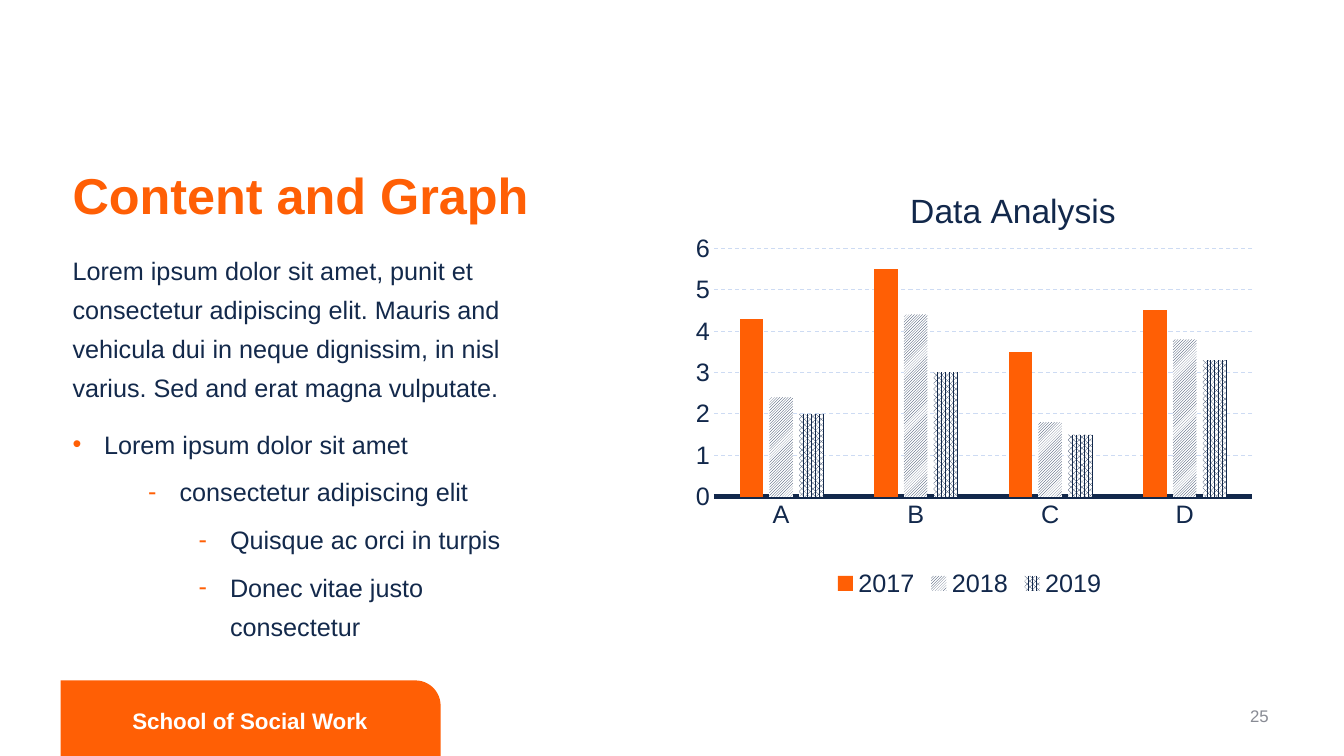
from dataclasses import dataclass

from lxml import etree
from pptx import Presentation
from pptx.chart.data import CategoryChartData
from pptx.dml.color import RGBColor
from pptx.enum.chart import XL_CHART_TYPE, XL_LEGEND_POSITION, XL_TICK_MARK
from pptx.enum.dml import MSO_LINE, MSO_PATTERN
from pptx.enum.shapes import MSO_SHAPE
from pptx.enum.text import MSO_ANCHOR, MSO_AUTO_SIZE, PP_ALIGN
from pptx.oxml.ns import qn
from pptx.util import Pt

CLUSTERED = XL_CHART_TYPE.COLUMN_CLUSTERED
LEGEND_BOTTOM = XL_LEGEND_POSITION.BOTTOM
NO_TICKS = XL_TICK_MARK.NONE
DASH = MSO_LINE.DASH
UPWARD_DIAGONAL = MSO_PATTERN.DARK_UPWARD_DIAGONAL
DENSE_DOTS = MSO_PATTERN.PERCENT_75
TITLE_ONLY_AND_BODY = 1
LEFT, CENTER = PP_ALIGN.LEFT, PP_ALIGN.CENTER
TOP, MIDDLE, BOTTOM = MSO_ANCHOR.TOP, MSO_ANCHOR.MIDDLE, MSO_ANCHOR.BOTTOM


@dataclass(frozen=True)
class Theme:
    font: str = "Arial"
    orange: str = "FF5F05"
    navy: str = "13294B"
    chart_navy: str = "12284B"
    grid: str = "CDDBF3"
    gray: str = "888B94"
    white: str = "FFFFFF"
    title_size: int = 36
    body_size: int = 18
    chart_title_size: int = 24
    footer_size: int = 16
    number_size: int = 12


THEME = Theme()

SLIDE_SIZE = (960, 540)
TITLE = "Content and Graph"
# Text, level, bullet, left margin, space before
BODY = [
    ("Lorem ipsum dolor sit amet, punit et consectetur adipiscing elit. "
     "Mauris and vehicula dui in neque dignissim, in nisl varius. "
     "Sed and erat magna vulputate.", 0, None, 0, 0),
    ("Lorem ipsum dolor sit amet", 0, "•", 22.5, 12),
    ("consectetur adipiscing elit", 1, "-", 76.5, 6),
    ("Quisque ac orci in turpis", 2, "-", 112.5, 6),
    ("Donec vitae justo consectetur", 2, "-", 112.5, 6),
]
HANGING = 22.5
FOOTER = "School of Social Work"
SLIDE_NUMBER = "25"

CHART_TITLE = "Data Analysis"
CATEGORIES = ["A", "B", "C", "D"]
# Name, values, pattern
SERIES = [
    ("2017", (4.3, 5.5, 3.5, 4.5), None),
    ("2018", (2.4, 4.4, 1.8, 3.8), UPWARD_DIAGONAL),
    ("2019", (2, 3, 1.5, 3.3), DENSE_DOTS),
]

# Left, top, width, height
TITLE_BOX = (44.6, 118, 353.5, 46.8)
BODY_BOX = (44.6, 172, 334.8, 312.5)
CHART_BOX = (480.2, 118, 424.8, 312.5)
TAB_BOX = (43.4, 486, 271.4, 54)
FOOTER_BOX = (56.9, 500.4, 243.4, 28.8)
NUMBER_BOX = (884.9, 500.4, 29.5, 21.6)


def color(value):
    return RGBColor.from_string(value)


def points(box):
    return [Pt(value) for value in box]


def place(shape, box):
    shape.left, shape.top, shape.width, shape.height = points(box)


def style_font(font, size, value, bold=False):
    font.name, font.size, font.bold = THEME.font, Pt(size), bold
    font.color.rgb = color(value)


def set_frame(shape, anchor, auto_size=MSO_AUTO_SIZE.NONE):
    frame = shape.text_frame
    frame.word_wrap = True
    frame.auto_size = auto_size
    frame.vertical_anchor = anchor
    return frame


def add_run(paragraph, text, size, value, bold=False):
    run = paragraph.add_run()
    run.text = text
    style_font(run.font, size, value, bold)


def set_bullet(paragraph, bullet, margin):
    properties = paragraph._p.get_or_add_pPr()
    properties.set("marL", str(Pt(margin)))
    properties.set("indent", str(Pt(-HANGING if bullet else 0)))
    if not bullet:
        etree.SubElement(properties, qn("a:buNone"))
        return
    bullet_color = etree.SubElement(properties, qn("a:buClr"))
    etree.SubElement(bullet_color, qn("a:srgbClr"), val=THEME.orange)
    etree.SubElement(properties, qn("a:buFont"), typeface=THEME.font)
    etree.SubElement(properties, qn("a:buChar"), char=bullet)


def fill_shape(shape, value):
    shape.shadow.inherit = False
    shape.fill.solid()
    shape.fill.fore_color.rgb = color(value)
    shape.line.fill.background()


def set_layout(element, position, **settings):
    """Give a chart part a manual layout in fractions of the chart."""
    layout = element.find(qn("c:layout"))
    if layout is None:
        layout = etree.Element(qn("c:layout"))
        element.insert(position, layout)
    manual = etree.SubElement(layout, qn("c:manualLayout"))
    for name, value in settings.items():
        etree.SubElement(manual, qn("c:" + name), val=str(value))


def fill_chart_area(chart):
    """Put a white fill of 62 percent opacity behind the chart."""
    area = etree.Element(qn("c:spPr"))
    fill = etree.SubElement(area, qn("a:solidFill"))
    shade = etree.SubElement(fill, qn("a:srgbClr"), val=THEME.white)
    etree.SubElement(shade, qn("a:alpha"), val="62000")
    line = etree.SubElement(area, qn("a:ln"))
    etree.SubElement(line, qn("a:noFill"))
    chart._chartSpace.find(qn("c:chart")).addnext(area)


def add_text(slide):
    title, body = slide.placeholders[0], slide.placeholders[1]
    place(title, TITLE_BOX)
    frame = set_frame(title, BOTTOM, MSO_AUTO_SIZE.SHAPE_TO_FIT_TEXT)
    paragraph = frame.paragraphs[0]
    paragraph.alignment, paragraph.line_spacing = LEFT, 0.9
    add_run(paragraph, TITLE, THEME.title_size, THEME.orange, True)

    place(body, BODY_BOX)
    frame = set_frame(body, TOP)
    for index, (text, level, bullet, margin, before) in enumerate(BODY):
        paragraph = frame.add_paragraph() if index else frame.paragraphs[0]
        set_bullet(paragraph, bullet, margin)
        paragraph.level, paragraph.line_spacing = level, 1.3
        paragraph.space_before = Pt(before)
        add_run(paragraph, text, THEME.body_size, THEME.navy)


def add_data_chart(slide):
    data = CategoryChartData()
    data.categories = CATEGORIES
    for name, values, _ in SERIES:
        data.add_series(name, values)
    chart = slide.shapes.add_chart(CLUSTERED, *points(CHART_BOX), data).chart
    style_font(chart.font, THEME.body_size, THEME.chart_navy)
    fill_chart_area(chart)

    chart.has_title = True
    paragraph = chart.chart_title.text_frame.paragraphs[0]
    add_run(paragraph, CHART_TITLE, THEME.chart_title_size, THEME.chart_navy)
    set_layout(chart.chart_title._element, 1,
               xMode="edge", yMode="edge", x=0.39, y=0.04)
    set_layout(chart._chartSpace.chart.plotArea, 0, layoutTarget="inner",
               xMode="edge", yMode="edge", x=0.07, y=0.19, w=0.905, h=0.568)

    chart.has_legend = True
    chart.legend.position = LEGEND_BOTTOM
    chart.legend.include_in_layout = False
    style_font(chart.legend.font, THEME.body_size, THEME.chart_navy)

    for axis in (chart.category_axis, chart.value_axis):
        axis.major_tick_mark = axis.minor_tick_mark = NO_TICKS
        style_font(axis.tick_labels.font, THEME.body_size, THEME.chart_navy)
    baseline = chart.category_axis.format.line
    baseline.color.rgb, baseline.width = color(THEME.chart_navy), Pt(3.25)
    value_axis = chart.value_axis
    value_axis.minimum_scale, value_axis.maximum_scale = 0, 6
    value_axis.major_unit = 1
    value_axis.format.line.fill.background()
    grid = value_axis.major_gridlines.format.line
    grid.color.rgb, grid.width = color(THEME.grid), Pt(0.75)
    grid.dash_style = DASH

    plot = chart.plots[0]
    plot.gap_width, plot.overlap, plot.vary_by_categories = 219, -27, False
    for series, (_, _, pattern) in zip(plot.series, SERIES):
        fill = series.format.fill
        if pattern is None:
            fill.solid()
            fill.fore_color.rgb = color(THEME.orange)
        else:
            fill.patterned()
            fill.pattern = pattern
            fill.fore_color.rgb = color(THEME.chart_navy)
            fill.back_color.rgb = color(THEME.white)


def add_footer(slide):
    tab = slide.shapes.add_shape(MSO_SHAPE.ROUND_1_RECTANGLE, *points(TAB_BOX))
    tab.adjustments[0] = 0.334
    fill_shape(tab, THEME.orange)
    label = slide.shapes.add_textbox(*points(FOOTER_BOX))
    number = slide.shapes.add_shape(MSO_SHAPE.RECTANGLE, *points(NUMBER_BOX))
    fill_shape(number, THEME.white)
    for shape, text, size, value, bold in (
            (label, FOOTER, THEME.footer_size, THEME.white, True),
            (number, SLIDE_NUMBER, THEME.number_size, THEME.gray, False)):
        paragraph = set_frame(shape, MIDDLE).paragraphs[0]
        paragraph.alignment = CENTER
        add_run(paragraph, text, size, value, bold)


def main():
    presentation = Presentation()
    presentation.slide_width, presentation.slide_height = points(SLIDE_SIZE)
    layout = presentation.slide_layouts[TITLE_ONLY_AND_BODY]
    slide = presentation.slides.add_slide(layout)
    add_text(slide)
    add_data_chart(slide)
    add_footer(slide)
    presentation.save("out.pptx")


if __name__ == "__main__":
    main()
